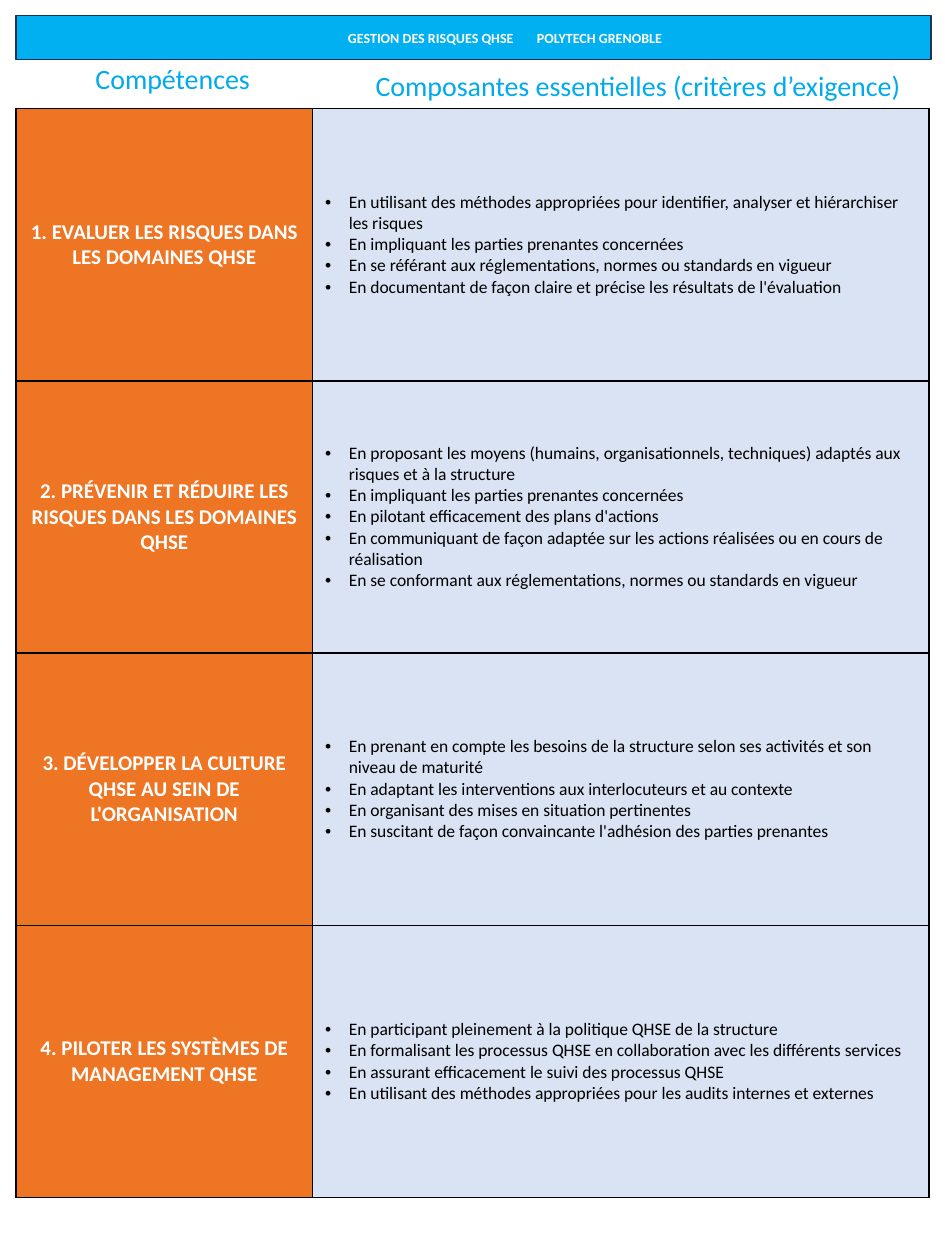
from lxml.etree import SubElement
from pptx import Presentation
from pptx.dml.color import RGBColor
from pptx.enum.shapes import MSO_SHAPE
from pptx.enum.text import MSO_ANCHOR, PP_ALIGN
from pptx.oxml.ns import qn
from pptx.util import Pt

INK = {
    "bar": "00B0F0", "edge": "1E3256", "head": "00AAEB", "skill": "EE7523",
    "list": "DAE3F3", "white": "FFFFFF", "black": "000000",
}
FORMS = {
    "title": {"size": Pt(8), "bold": True, "color": "white"},
    "head": {"size": Pt(16), "bold": False, "color": "head"},
    "skill": {"size": Pt(12), "bold": True, "color": "white"},
    "item": {"size": Pt(10), "bold": False, "color": "black"},
}
CENTER = {"alignment": PP_ALIGN.CENTER}
ROWS = [
    ("1. EVALUER LES RISQUES DANS LES DOMAINES QHSE", [
        "En utilisant des méthodes appropriées pour identifier, analyser et hiérarchiser les risques",
        "En impliquant les parties prenantes concernées",
        "En se référant aux réglementations, normes ou standards en vigueur",
        "En documentant de façon claire et précise les résultats de l'évaluation",
    ]),
    ("2. PRÉVENIR ET RÉDUIRE LES RISQUES DANS LES DOMAINES QHSE", [
        "En proposant les moyens (humains, organisationnels, techniques) adaptés aux risques et à la structure",
        "En impliquant les parties prenantes concernées",
        "En pilotant efficacement des plans d'actions",
        "En communiquant de façon adaptée sur les actions réalisées ou en cours de réalisation",
        "En se conformant aux réglementations, normes ou standards en vigueur",
    ]),
    ("3. DÉVELOPPER LA CULTURE QHSE AU SEIN DE L'ORGANISATION", [
        "En prenant en compte les besoins de la structure selon ses activités et son niveau de maturité",
        "En adaptant les interventions aux interlocuteurs et au contexte",
        "En organisant des mises en situation pertinentes",
        "En suscitant de façon convaincante l'adhésion des parties prenantes",
    ]),
    ("4. PILOTER LES SYSTÈMES DE MANAGEMENT QHSE", [
        "En participant pleinement à la politique QHSE de la structure",
        "En formalisant les processus QHSE en collaboration avec les différents services",
        "En assurant efficacement le suivi des processus QHSE",
        "En utilisant des méthodes appropriées pour les audits internes et externes",
    ]),
]


def color(name):
    return RGBColor.from_string(INK[name])


class Sheet:
    def __init__(self, slide, font="Calibri"):
        self.slide = slide
        self.font = font

    def label(self, para, text, form, layout):
        run = para.add_run()
        run.text = text
        run.font.name = self.font
        for key, value in FORMS[form].items():
            if key == "color":
                run.font.color.rgb = color(value)
            else:
                setattr(run.font, key, value)
        for key, value in layout.items():
            setattr(para, key, value)

    def bar(self, text, *box):
        shape = self.slide.shapes.add_shape(MSO_SHAPE.RECTANGLE, *map(Pt, box))
        shape.shadow.inherit = False
        shape.fill.solid()
        shape.fill.fore_color.rgb = color("bar")
        shape.line.color.rgb = color("edge")
        shape.line.width = Pt(1)
        frame = shape.text_frame
        frame.vertical_anchor = MSO_ANCHOR.MIDDLE
        self.label(frame.paragraphs[0], text, "title", CENTER)

    def head(self, text, *box):
        frame = self.slide.shapes.add_textbox(*map(Pt, box)).text_frame
        frame.word_wrap = True
        self.label(frame.paragraphs[0], text, "head",
                   CENTER | {"line_spacing": 0.9})

    def bullet(self, para):
        """Give the paragraph a round bullet with a hanging indent."""
        props = para._p.get_or_add_pPr()
        props.set("marL", str(Pt(13.5)))
        props.set("indent", str(-Pt(13.5)))
        SubElement(props, qn("a:buFont"), typeface="Arial")
        SubElement(props, qn("a:buChar"), char="•")

    def paint(self, cell, fill):
        """Centre the cell vertically, frame it and fill it."""
        cell.vertical_anchor = MSO_ANCHOR.MIDDLE
        props = cell._tc.get_or_add_tcPr()
        for side in "LRTB":
            line = SubElement(props, qn(f"a:ln{side}"), w=str(Pt(1)))
            solid = SubElement(line, qn("a:solidFill"))
            SubElement(solid, qn("a:srgbClr"), val=INK["black"])
        cell.fill.solid()
        cell.fill.fore_color.rgb = color(fill)

    def table(self, rows, left, top, widths, height):
        grid = self.slide.shapes.add_table(
            len(rows), len(widths), Pt(left), Pt(top),
            Pt(sum(widths)), Pt(height * len(rows))).table
        for col, width in zip(grid.columns, widths):
            col.width = Pt(width)
        for i, (skill, items) in enumerate(rows):
            grid.rows[i].height = Pt(height)
            name, detail = grid.cell(i, 0), grid.cell(i, 1)
            self.paint(name, "skill")
            self.paint(detail, "list")
            self.label(name.text_frame.paragraphs[0], skill, "skill",
                       CENTER | {"space_after": Pt(6)})
            frame = detail.text_frame
            for j, item in enumerate(items):
                para = frame.add_paragraph() if j else frame.paragraphs[0]
                self.bullet(para)
                self.label(para, item, "item", {})


def main():
    deck = Presentation()
    deck.slide_width, deck.slide_height = Pt(540), Pt(720)
    sheet = Sheet(deck.slides.add_slide(deck.slide_layouts[6]))
    sheet.bar("\tGESTION DES RISQUES QHSE\tPOLYTECH GRENOBLE",
              9.2, 8.8, 522.8, 25.2)
    sheet.head("Compétences", 16.6, 33.8, 164.2, 24.5)
    sheet.head("Composantes essentielles (critères d’exigence)",
               190, 37.6, 349.2, 24.5)
    sheet.table(ROWS, 9.2, 62, (169.4, 352.4), 155.6)
    deck.save("out.pptx")


if __name__ == "__main__":
    main()
